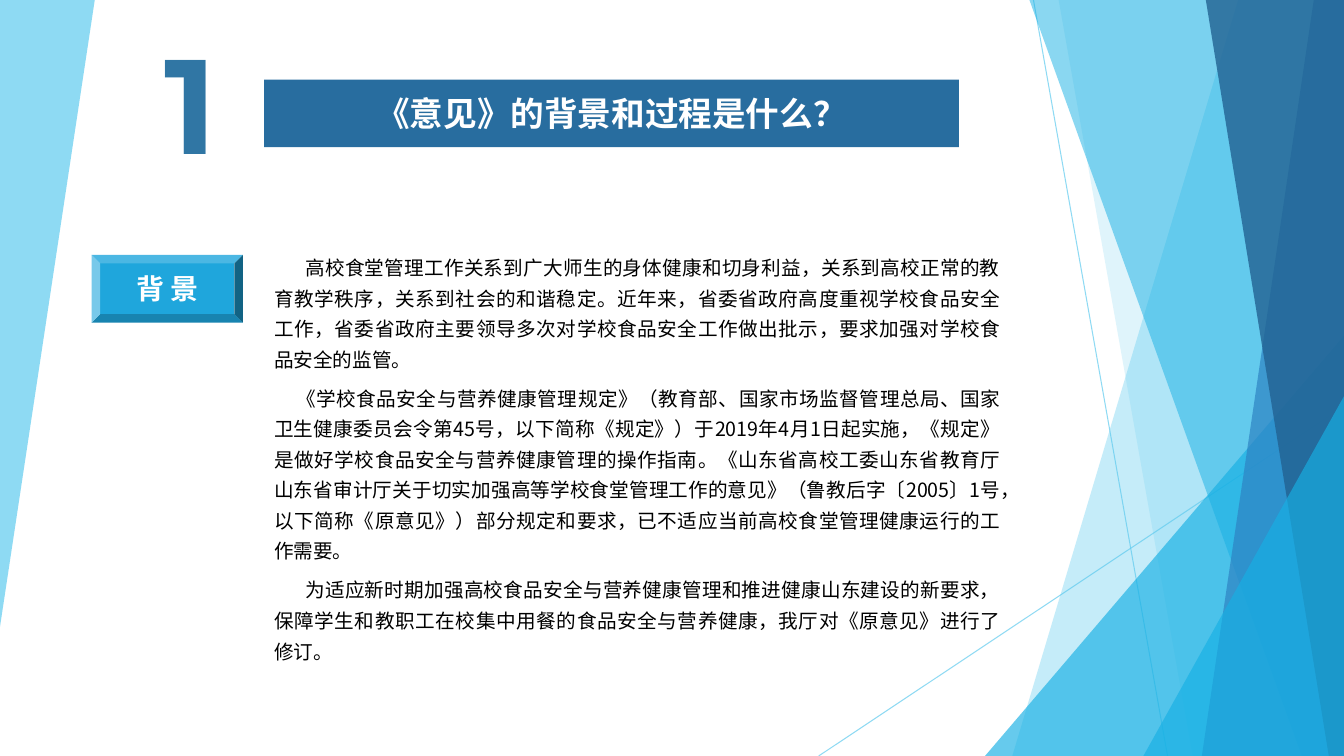
from pptx import Presentation
from pptx.dml.color import RGBColor
from pptx.enum.shapes import MSO_CONNECTOR as Connector, MSO_SHAPE as Preset
from pptx.enum.text import MSO_ANCHOR as Anchor, MSO_AUTO_SIZE as AutoSize, PP_ALIGN as Align
from pptx.oxml.ns import qn
from pptx.util import Inches, Pt
from lxml.etree import SubElement

WIDTH, HEIGHT = 13.33, 7.5
CHINESE, DISPLAY = "Noto Sans CJK SC", "Montserrat"
SKY, CYAN, BLUE, NAVY = "5FCBEF", "17B0E4", "2E83C3", "226292"
BAR, BADGE, NUMERAL, WHITE, BLACK = "286D9F", "1FA6DC", "3076A4", "FFFFFF", "000000"

PARAGRAPHS = [  # first-line indent, text
    (0.31, "高校食堂管理工作关系到广大师生的身体健康和切身利益，关系到高校正常的教育教学秩序，"
           "关系到社会的和谐稳定。近年来，省委省政府高度重视学校食品安全工作，"
           "省委省政府主要领导多次对学校食品安全工作做出批示，要求加强对学校食品安全的监管。"),
    (0.22, "《学校食品安全与营养健康管理规定》（教育部、国家市场监督管理总局、"
           "国家卫生健康委员会令第45号，以下简称《规定》）于2019年4月1日起实施，"
           "《规定》是做好学校食品安全与营养健康管理的操作指南。"
           "《山东省高校工委山东省教育厅山东省审计厅关于切实加强高等学校食堂管理工作的意见》"
           "（鲁教后字〔2005〕1号，以下简称《原意见》）部分规定和要求，"
           "已不适应当前高校食堂管理健康运行的工作需要。"),
    (0.31, "为适应新时期加强高校食品安全与营养健康管理和推进健康山东建设的新要求，"
           "保障学生和教职工在校集中用餐的食品安全与营养健康，我厅对《原意见》进行了修订。"),
]


def paint(fill, color, opacity=100):
    fill.solid()
    fill.fore_color.rgb = RGBColor.from_string(color)
    if opacity < 100:
        tint = fill._xPr.find(qn("a:solidFill"))[0]
        SubElement(tint, qn("a:alpha")).set("val", str(opacity * 1000))


def finish(shape, color, opacity=100):
    paint(shape.fill, color, opacity)
    shape.line.fill.background()
    shape.shadow.inherit = False


def write(para, text, size, color, font=CHINESE, bold=False):
    run = para.add_run()
    run.text = text
    run.font.size, run.font.bold, run.font.name = Pt(size), bold, font
    paint(run.font.fill, color)
    SubElement(run.font._element, qn("a:ea")).set("typeface", font)


def add_preset(page, preset, box, color, opacity=100):
    shape = page.shapes.add_shape(preset, *map(Inches, box))
    finish(shape, color, opacity)
    return shape


def add_text_box(page, box):
    frame = page.shapes.add_textbox(*map(Inches, box)).text_frame
    frame.word_wrap = True
    frame.auto_size = AutoSize.SHAPE_TO_FIT_TEXT
    return frame


def add_band(page, corners, color, opacity):
    points = [(Inches(x), Inches(y)) for x, y in corners]
    builder = page.shapes.build_freeform(*points[0])
    builder.add_line_segments(points[1:], close=True)
    finish(builder.convert_to_shape(), color, opacity)


def add_right_band(page, top, bottom, color, opacity):
    """Band that runs from a slanted left edge to the page's right side."""
    corners = [(top, 0), (WIDTH, 0), (WIDTH, HEIGHT), (bottom, HEIGHT)]
    add_band(page, corners, color, opacity)


def add_corner(page, left, top):
    """Triangle that fills the lower right corner."""
    box = (left, top, WIDTH - left, HEIGHT - top)
    add_preset(page, Preset.ISOSCELES_TRIANGLE, box, CYAN, 66).adjustments[0] = 1


def add_hairline(page, start, end):
    line = page.shapes.add_connector(Connector.STRAIGHT, *map(Inches, start + end))
    line.line.width = Pt(0.75)
    paint(line.line.fill, SKY, 70)
    SubElement(line._element.spPr, qn("a:effectLst"))


def add_backdrop(page):
    add_band(page, [(0, 0), (0.94, 0), (0, 6.22)], SKY, 70)
    add_hairline(page, (10.25, 0), (11.58, HEIGHT))
    add_hairline(page, (WIDTH, 4.03), (8.12, HEIGHT))
    add_right_band(page, 12.28, 10.04, SKY, 36)
    add_right_band(page, 10.5, 11.83, SKY, 20)
    add_corner(page, 9.77, 3.33)
    add_right_band(page, 10.21, 12.91, CYAN, 50)
    add_right_band(page, 13.03, 11.92, BLUE, 70)
    add_right_band(page, 11.96, 13.18, NAVY, 80)
    add_corner(page, 11.34, 3.93)


def add_heading(page, box):
    """Rounded title bar with the section numeral to its left."""
    left, top, width, height = box
    title = page.shapes.title
    title.left, title.top, title.width, title.height = map(Inches, box)
    outline = SubElement(title._element.spPr, qn("a:prstGeom"))
    outline.set("prst", "roundRect")
    SubElement(outline, qn("a:avLst"))
    paint(title.fill, BAR)
    frame = title.text_frame
    frame.vertical_anchor = Anchor.MIDDLE
    frame.auto_size = AutoSize.NONE
    para = frame.paragraphs[0]
    para.alignment = Align.CENTER
    write(para, "《意见》的背景和过程是什么？", 24, WHITE, bold=True)

    numeral = add_text_box(page, (left - 1.09, top - 0.64, 1.08, 1.72))
    write(numeral.paragraphs[0], "1", 96, NUMERAL, DISPLAY, bold=True)


def add_badge(page, box):
    frame = add_preset(page, Preset.BEVEL, box, BADGE).text_frame
    frame.vertical_anchor = Anchor.MIDDLE
    frame.paragraphs[0].alignment = Align.CENTER
    write(frame.paragraphs[0], "背 景", 20, WHITE, bold=True)


def add_body(page, box):
    frame = add_text_box(page, box)
    for number, (indent, text) in enumerate(PARAGRAPHS):
        para = frame.add_paragraph() if number else frame.paragraphs[0]
        para.alignment = Align.JUSTIFY
        para.line_spacing, para.space_after = 1.3, Pt(6)
        para._p.get_or_add_pPr().set("indent", str(Inches(indent)))
        write(para, text, 14, BLACK)


def build_background_page(deck):
    page = deck.slides.add_slide(deck.slide_layouts[5])
    add_backdrop(page)
    add_heading(page, (2.62, 0.79, 6.89, 0.67))
    add_badge(page, (0.91, 2.53, 1.5, 0.67))
    add_body(page, (2.62, 2.42, 7.4, 4.24))


def main():
    deck = Presentation()
    deck.slide_width, deck.slide_height = Inches(WIDTH), Inches(HEIGHT)
    build_background_page(deck)
    deck.save("out.pptx")


if __name__ == "__main__":
    main()
